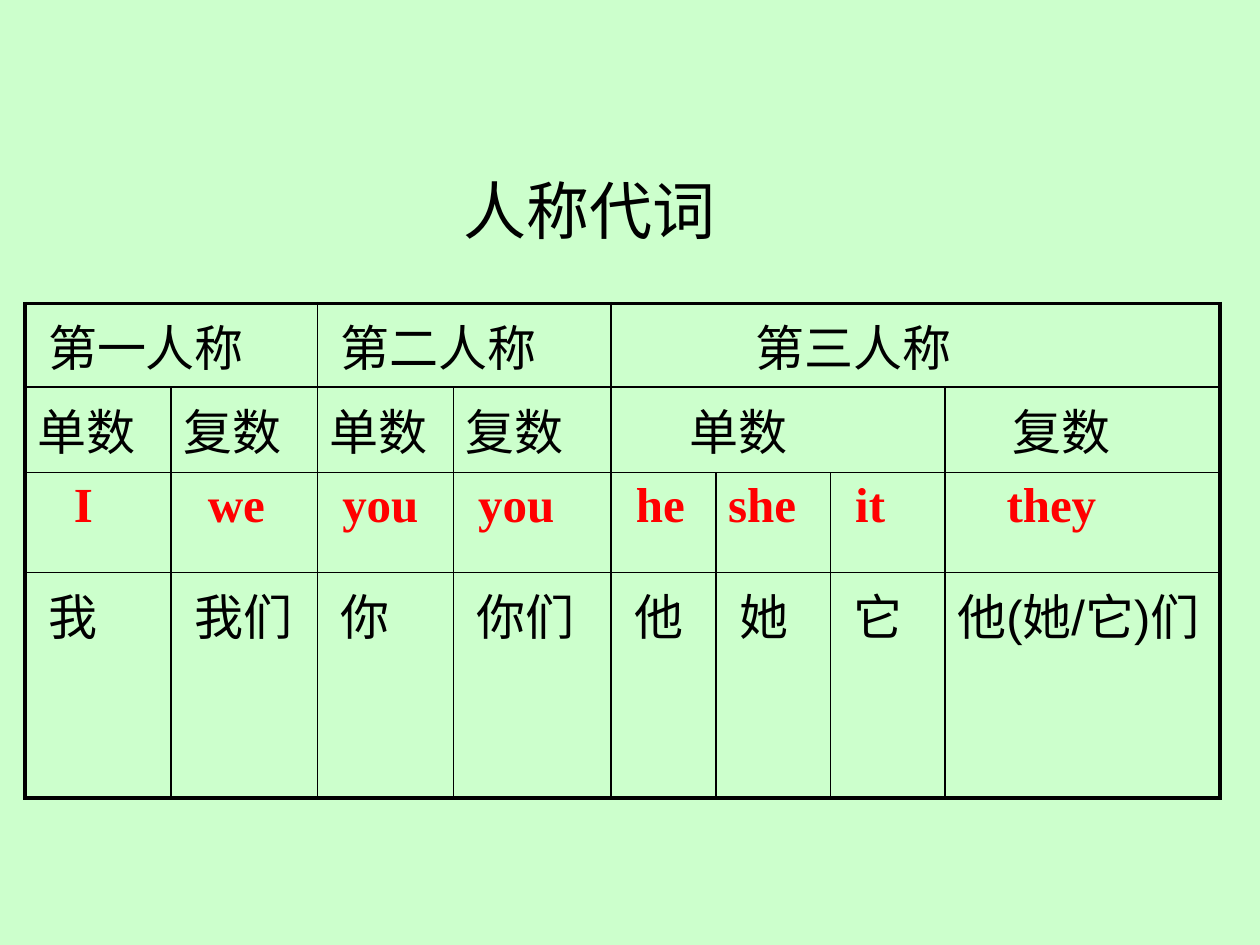
from lxml import etree
from pptx import Presentation
from pptx.dml.color import RGBColor
from pptx.enum.text import MSO_ANCHOR, MSO_AUTO_SIZE, PP_ALIGN
from pptx.oxml.ns import qn
from pptx.util import Cm, Pt

TOP, LEFT = MSO_ANCHOR.TOP, PP_ALIGN.LEFT
FIT_SHAPE = MSO_AUTO_SIZE.SHAPE_TO_FIT_TEXT

THEME = {
    "background": RGBColor(0xCC, 0xFF, 0xCC),
    "border": "000000",
    "outer": Pt(2.25),
    "inner": Pt(1),
    "title": {"name": "Arial", "size": Pt(36), "bold": False, "color": RGBColor(0, 0, 0)},
    "chinese": {"name": "Arial", "size": Pt(28), "bold": False, "color": RGBColor(0, 0, 0)},
    "english": {"name": "Times New Roman", "size": Pt(28), "bold": True,
                "color": RGBColor(0xFF, 0, 0)},
}

TITLE = "人称代词"
COLUMN_WIDTHS = [2.95, 2.95, 2.74, 3.18, 2.11, 2.31, 2.31, 5.54]

ROWS = [
    (1.68, "chinese", [("第一人称", 2, 0.22), ("第二人称", 2, 0.22), ("第三人称", 4, 2.66)]),
    (1.73, "chinese", [("单数", 1, 0), ("复数", 1, 0), ("单数", 1, 0), ("复数", 1, 0),
                       ("单数", 3, 1.33), ("复数", 1, 1.11)]),
    (2.01, "english", [("I", 1, 0.74), ("we", 1, 0.49), ("you", 1, 0.25), ("you", 1, 0.25),
                       ("he", 1, 0.25), ("she", 1, 0), ("it", 1, 0.25), ("they", 1, 0.99)]),
    (4.55, "chinese", [("我", 1, 0.22), ("我们", 1, 0.22), ("你", 1, 0.22), ("你们", 1, 0.22),
                       ("他", 1, 0.22), ("她", 1, 0.22), ("它", 1, 0.22), ("他(她/它)们", 1, 0)]),
]
CELL_MARGINS = {"margin_left": 0.25, "margin_right": 0.25, "margin_top": 0.13, "margin_bottom": 0.13}


def format_font(font, style):
    for name, value in style.items():
        if name == "color":
            font.color.rgb = value
        else:
            setattr(font, name, value)


def add_borders(cell, outer_sides):
    properties = cell._tc.get_or_add_tcPr()
    for side in ("lnL", "lnR", "lnT", "lnB"):
        width = THEME["outer"] if side in outer_sides else THEME["inner"]
        line = etree.SubElement(properties, qn(f"a:{side}"), w=str(int(width)))
        fill = etree.SubElement(line, qn("a:solidFill"))
        etree.SubElement(fill, qn("a:srgbClr"), val=THEME["border"])


def add_title(slide):
    title = slide.shapes.title
    box = {"left": 9.09, "top": 3.33, "width": 5.59, "height": 1.78}
    for name, value in box.items():
        setattr(title, name, Cm(value))
    frame = title.text_frame
    frame.text = TITLE
    for name, value in {"word_wrap": False, "vertical_anchor": TOP, "auto_size": FIT_SHAPE}.items():
        setattr(frame, name, value)
    paragraph = frame.paragraphs[0]
    paragraph.alignment = LEFT
    format_font(paragraph.runs[0].font, THEME["title"])


def add_pronoun_table(slide):
    row_count, column_count = len(ROWS), len(COLUMN_WIDTHS)
    table = slide.shapes.add_table(
        row_count, column_count, Cm(0.5), Cm(6.12),
        Cm(sum(COLUMN_WIDTHS)), Cm(sum(row[0] for row in ROWS))).table
    table.first_row = table.horz_banding = False
    for column, width in zip(table.columns, COLUMN_WIDTHS):
        column.width = Cm(width)

    for row_index, (height, style, entries) in enumerate(ROWS):
        table.rows[row_index].height = Cm(height)
        for column_index in range(column_count):
            cell = table.cell(row_index, column_index)
            edges = {"lnL": column_index == 0, "lnR": column_index == column_count - 1,
                     "lnT": row_index == 0, "lnB": row_index == row_count - 1}
            add_borders(cell, [side for side, is_outer in edges.items() if is_outer])
            cell.fill.background()

        column_index = 0
        for text, span, indent in entries:
            cell = table.cell(row_index, column_index)
            last_column = column_index + span - 1
            if span > 1:
                cell.merge(table.cell(row_index, last_column))
            if last_column == column_count - 1:
                cell._tc.tcPr.find(qn("a:lnR")).set("w", str(int(THEME["outer"])))
            for name, value in CELL_MARGINS.items():
                setattr(cell, name, Cm(value))
            cell.margin_left = Cm(CELL_MARGINS["margin_left"] + indent)
            cell.vertical_anchor = TOP
            run = cell.text_frame.paragraphs[0].add_run()
            run.text = text
            format_font(run.font, THEME[style])
            column_index += span


def main():
    presentation = Presentation()
    presentation.slide_width, presentation.slide_height = Cm(25.4), Cm(19.05)
    slide = presentation.slides.add_slide(presentation.slide_layouts[5])
    slide.background.fill.solid()
    slide.background.fill.fore_color.rgb = THEME["background"]
    add_title(slide)
    add_pronoun_table(slide)
    presentation.save("out.pptx")


if __name__ == "__main__":
    main()
